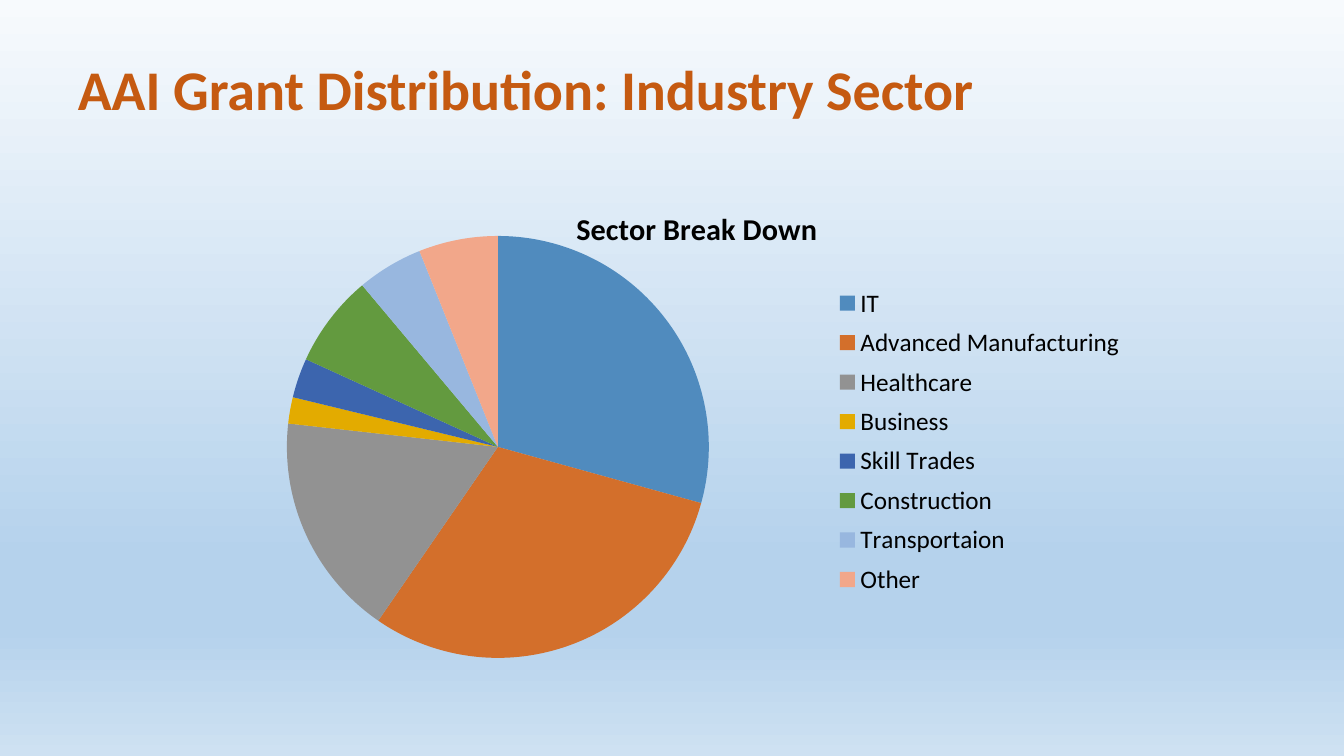
from copy import deepcopy

from pptx import Presentation
from pptx.chart.data import CategoryChartData
from pptx.dml.color import RGBColor
from pptx.enum.chart import XL_CHART_TYPE as ChartType, XL_LEGEND_POSITION as LegendPosition
from pptx.enum.text import MSO_ANCHOR as Anchor
from pptx.oxml import parse_xml
from pptx.oxml.ns import nsdecls
from pptx.util import Pt

EMU_PER_PX = 914400 / 100.8
FONT = "Calibri"
BACKDROP = [(0, "F7FAFD"), (0.74, "B5D2EC"), (0.83, "B5D2EC"), (1, "CEE1F2")]
SECTORS = [
    ("IT", 29, "508BBE"),
    ("Advanced Manufacturing", 30, "D36F2B"),
    ("Healthcare", 17, "929292"),
    ("Business", 2, "E3AB00"),
    ("Skill Trades", 3, "3C65AE"),
    ("Construction", 7, "639A3F"),
    ("Transportaion", 5, "98B7DF"),
    ("Other", 6, "F2A78A"),
]
CHART_BOX = (168, 186, 1058, 520)
PIE_BOX = (94, 50, 472, 422)
LEGEND_BOX = (666, 93, 291, 325)


def px(length):
    """Turn px into EMU."""
    return round(length * EMU_PER_PX)


def rgb(code):
    """Turn a hex string into a colour."""
    return RGBColor.from_string(code)


def style_font(font, size, color, bold=False):
    """Set typeface, size, colour and weight."""
    font.name, font.size, font.bold = FONT, Pt(size), bold
    font.color.rgb = rgb(color)


def paint_backdrop(slide, stops):
    """Fill the slide background with a vertical gradient."""
    fill = slide.background.fill
    fill.gradient()
    fill.gradient_angle = 270
    stop_list = slide.element.xpath(".//a:gsLst")[0]
    while len(stop_list) < len(stops):
        stop_list.append(deepcopy(stop_list[0]))
    for stop, (position, color) in zip(fill.gradient_stops, stops):
        stop.position = position
        stop.color.rgb = rgb(color)


def add_heading(slide, text, box):
    """Add the slide heading, anchored at the bottom of its box."""
    frame = slide.shapes.add_textbox(*map(px, box)).text_frame
    frame.word_wrap = True
    frame.vertical_anchor = Anchor.BOTTOM
    line = frame.paragraphs[0]
    line.line_spacing = 0.9
    run = line.add_run()
    run.text = text
    style_font(run.font, 40, "C55A11", bold=True)


def place_part(part, index, box, target=""):
    """Fix a chart part at a px box measured inside the chart."""
    for automatic in part.xpath("c:layout"):
        part.remove(automatic)
    _, _, width, height = CHART_BOX
    fractions = zip("xywh", box, (width, height) * 2)
    sizes = "".join(f'<c:{side} val="{length / whole:.4f}"/>'
                    for side, length, whole in fractions)
    part.insert(index, parse_xml(
        f'<c:layout {nsdecls("c")}><c:manualLayout>{target}'
        f'<c:xMode val="edge"/><c:yMode val="edge"/>{sizes}'
        "</c:manualLayout></c:layout>"))


def add_pie(slide, title, sectors, box):
    """Add a titled pie chart with its legend on the right."""
    names, shares, colors = zip(*sectors)
    data = CategoryChartData()
    data.categories = names
    data.add_series(title, shares)
    chart = slide.shapes.add_chart(ChartType.PIE, *map(px, box), data).chart
    style_font(chart.font, 18, "000000")
    chart.has_title = True
    caption = chart.chart_title.text_frame.paragraphs[0].add_run()
    caption.text = title
    style_font(caption.font, 21.6, "000000", bold=True)
    chart.has_legend = True
    chart.legend.position = LegendPosition.RIGHT
    chart.legend.include_in_layout = False
    style_font(chart.legend.font, 18, "000000")
    pie = chart.plots[0]
    pie.vary_by_categories = True
    for index, color in enumerate(colors):
        slice_format = pie.series[0].points[index].format
        slice_format.fill.solid()
        slice_format.fill.fore_color.rgb = rgb(color)
        slice_format.line.fill.background()
    plot_area = chart.element.xpath(".//c:plotArea")[0]
    place_part(plot_area, 0, PIE_BOX, '<c:layoutTarget val="inner"/>')
    place_part(chart.element.xpath(".//c:legend")[0], 1, LEGEND_BOX)


def main():
    """Build and save the slide."""
    deck = Presentation()
    deck.slide_width, deck.slide_height = px(1344), px(756)
    slide = deck.slides.add_slide(deck.slide_layouts[6])
    paint_backdrop(slide, BACKDROP)
    add_heading(slide, "AAI Grant Distribution: Industry Sector", (68, 38, 1108, 90))
    add_pie(slide, "Sector Break Down", SECTORS, CHART_BOX)
    deck.save("out.pptx")


if __name__ == "__main__":
    main()
